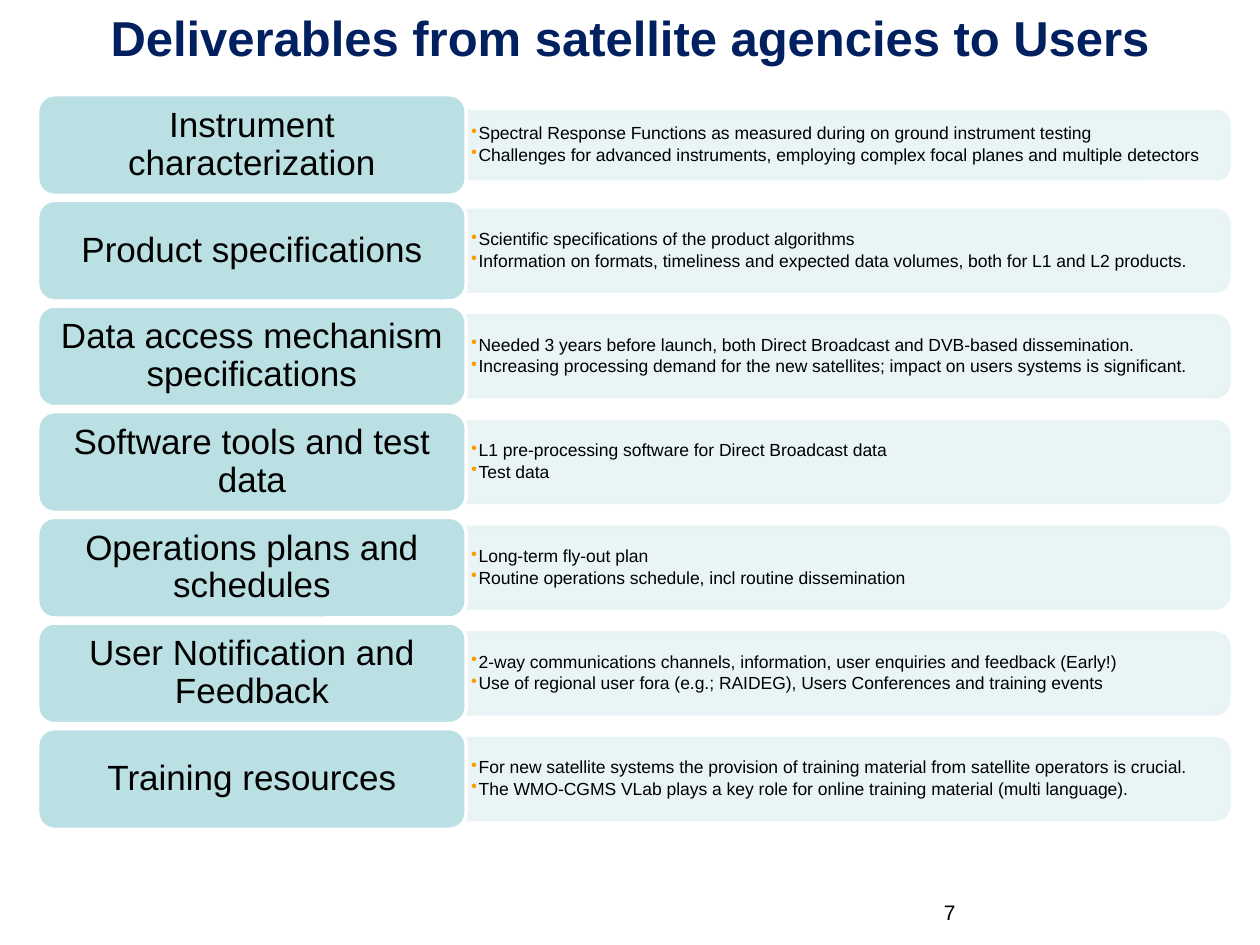
from dataclasses import dataclass

from lxml.etree import SubElement
from pptx import Presentation
from pptx.dml.color import RGBColor as RGB
from pptx.enum.shapes import MSO_SHAPE as Kind
from pptx.enum.text import MSO_ANCHOR as Anchor, PP_ALIGN as Align
from pptx.oxml.ns import qn
from pptx.util import Cm, Pt


@dataclass(frozen=True)
class Theme:
    font: str = "Arial"
    navy: str = "002060"
    black: str = "000000"
    white: str = "FFFFFF"
    teal: str = "BBE0E3"
    pale: str = "E7F3F4"
    orange: str = "FF9900"
    title: float = 28
    head: float = 20
    body: float = 10
    small: float = 12
    edge: float = 2


THEME = Theme()

ROWS = [
    ("Instrument characterization",
     ["Spectral Response Functions as measured during on ground instrument testing",
      "Challenges for advanced instruments, employing complex focal planes and multiple detectors"]),
    ("Product specifications",
     ["Scientific specifications of the product algorithms",
      "Information on formats, timeliness and expected data volumes, both for L1 and L2 products."]),
    ("Data access mechanism specifications",
     ["Needed 3 years before launch, both Direct Broadcast and DVB-based dissemination.",
      "Increasing processing demand for the new satellites; impact on users systems is significant."]),
    ("Software tools and test data",
     ["L1 pre-processing software for Direct Broadcast data",
      "Test data"]),
    ("Operations plans and schedules",
     ["Long-term fly-out plan",
      "Routine operations schedule, incl routine dissemination"]),
    ("User Notification and Feedback",
     ["2-way communications channels, information, user enquiries and feedback (Early!)",
      "Use of regional user fora (e.g.; RAIDEG), Users Conferences and training events"]),
    ("Training resources",
     ["For new satellite systems the provision of training material from satellite operators is crucial.",
      "The WMO-CGMS VLab plays a key role for online training material (multi language)."]),
]

# Row grid, in centimetres
LEFT, TOP, PITCH = 0.76, 1.91, 2.13
HEAD_W, HEAD_H = 8.64, 2.03
BODY_W = 15.37


def add_bullet(para):
    props = para._p.get_or_add_pPr()
    props.set("marL", str(Cm(0.15)))
    props.set("indent", str(-Cm(0.15)))
    tint = SubElement(props, qn("a:buClr"))
    SubElement(tint, qn("a:srgbClr"), val=THEME.orange)
    SubElement(props, qn("a:buChar"), char="•")


def add_text(slide, text, box, size, color=THEME.black, bold=False,
             align=Align.LEFT, anchor=Anchor.MIDDLE, inset=(0.25, 0.13),
             line=None, after=0, bullet=False):
    """Place text in a box (left, top, width, height); each line is a paragraph."""
    frame = slide.shapes.add_textbox(*map(Cm, box)).text_frame
    frame.word_wrap = True
    frame.vertical_anchor = anchor
    frame.margin_left = frame.margin_right = Cm(inset[0])
    frame.margin_top = frame.margin_bottom = Cm(inset[1])
    frame.text = text
    for para in frame.paragraphs:
        para.alignment = align
        para.space_after = Pt(after)
        if line:
            para.line_spacing = line
        if bullet:
            para.level = 1
            add_bullet(para)
        font = para.runs[0].font
        font.name, font.size, font.bold = THEME.font, Pt(size), bold
        font.color.rgb = RGB.from_string(color)


def add_block(slide, kind, box, fill, edge, turn=0, alpha=None):
    block = slide.shapes.add_shape(kind, *map(Cm, box))
    block.shadow.inherit = False
    block.rotation = turn
    block.line.width = Pt(THEME.edge)
    for paint, color in ((block.fill, fill), (block.line.fill, edge)):
        paint.solid()
        paint.fore_color.rgb = RGB.from_string(color)
    if alpha:
        for tint in block._element.spPr.iter(qn("a:srgbClr")):
            SubElement(tint, qn("a:alpha"), val=str(alpha * 1000))


def add_panel(slide, mid, depth, lines):
    """Draw the pale panel, rounded on its right side, with its bullets."""
    left = LEFT + HEAD_W
    # The preset rounds its top, so a tall shape is turned by a quarter
    box = (left + (BODY_W - depth) / 2, mid - BODY_W / 2, depth, BODY_W)
    turned = (box[0], box[1], depth, BODY_W)
    add_block(slide, Kind.ROUND_2_SAME_RECTANGLE, turned, THEME.pale,
              THEME.pale, turn=90, alpha=90)
    high = depth - 0.14
    add_text(slide, "\n".join(lines), (left, mid - high / 2, BODY_W - 0.1, high),
             THEME.body, inset=(0.1, 0.05), line=0.9, after=1.5, bullet=True)


def add_head(slide, top, text):
    add_block(slide, Kind.ROUNDED_RECTANGLE, (LEFT, top, HEAD_W, HEAD_H),
              THEME.teal, THEME.white)
    pad = 0.1
    box = (LEFT + pad, top + pad, HEAD_W - 2 * pad, HEAD_H - 2 * pad)
    add_text(slide, text, box, THEME.head, align=Align.CENTER,
             inset=(0.2, 0.1), line=0.9, after=7)


def main():
    deck = Presentation()
    deck.slide_width, deck.slide_height = Cm(25.4), Cm(19.05)
    slide = deck.slides.add_slide(deck.slide_layouts[6])
    add_text(slide, "Deliverables from satellite agencies to Users",
             (1.9, -0.84, 21.6, 3.18), THEME.title, color=THEME.navy,
             bold=True, align=Align.CENTER)
    for row, (head, lines) in enumerate(ROWS):
        top = TOP + row * PITCH
        depth = 1.63 if row else 1.35
        add_panel(slide, top + HEAD_H / 2, depth, lines)
        add_head(slide, top, head)
    add_text(slide, "7", (16.31, 18.01, 3.2, 0.86), THEME.small,
             align=Align.RIGHT, anchor=Anchor.TOP)
    deck.save("out.pptx")


if __name__ == "__main__":
    main()
